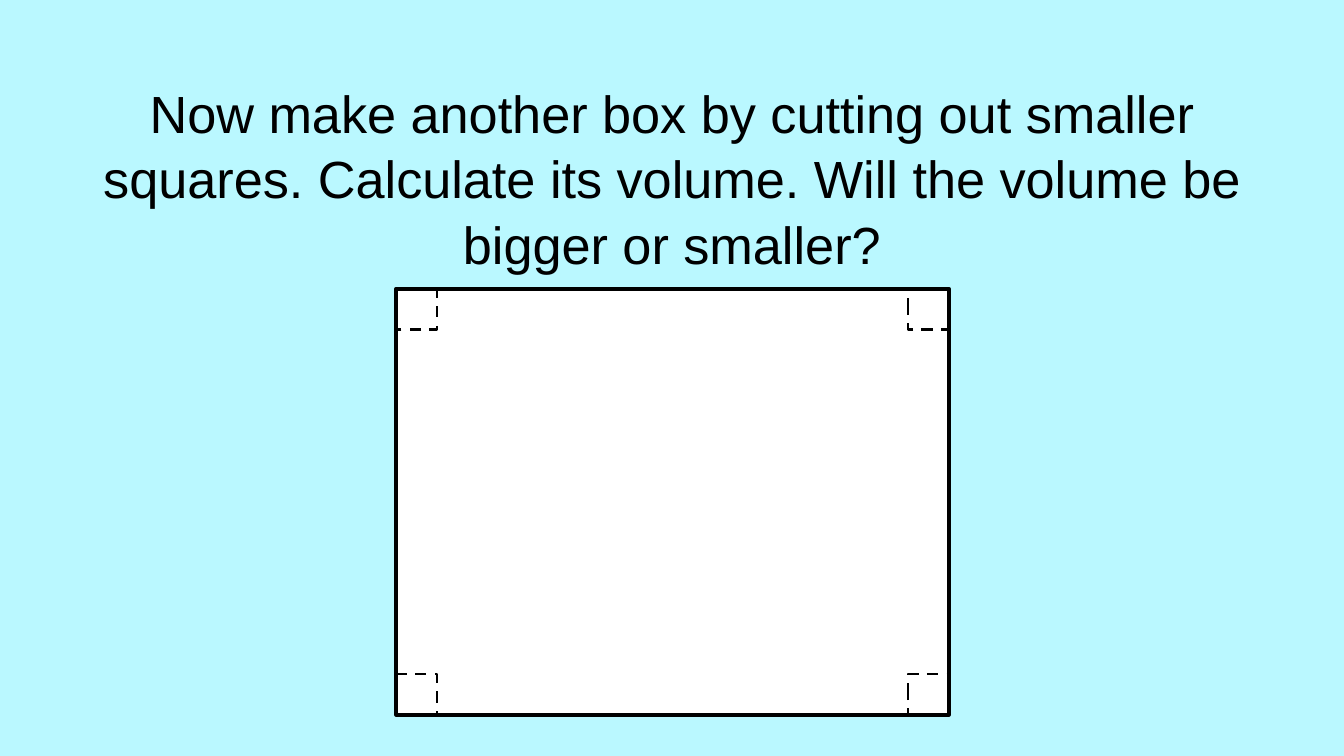
from pptx import Presentation
from pptx.dml.color import RGBColor
from pptx.enum.dml import MSO_LINE
from pptx.enum.shapes import MSO_SHAPE
from pptx.enum.text import MSO_ANCHOR, MSO_AUTO_SIZE, PP_ALIGN
from pptx.util import Cm, Pt

RECTANGLE = MSO_SHAPE.RECTANGLE
DASH = MSO_LINE.DASH
TOP = MSO_ANCHOR.TOP
NO_AUTOFIT = MSO_AUTO_SIZE.NONE
CENTER = PP_ALIGN.CENTER

TITLE_ONLY_LAYOUT = 5
SHEET_LEFT, SHEET_TOP = 7.49, 5.46
SHEET_WIDTH, SHEET_HEIGHT = 10.44, 8.05
CUT_SIDE = 0.77
QUESTION = (
    "Now make another box by cutting out smaller squares. "
    "Calculate its volume. Will the volume be bigger or smaller?"
)


def color(hex_code):
    """Return the colour for a hex string."""
    return RGBColor.from_string(hex_code)


def set_title(page, text):
    """Place and format the centred question in the title placeholder."""
    title = page.shapes.title
    title.left, title.top = Cm(0.86), Cm(1.24)
    title.width, title.height = Cm(23.67), Cm(1.6)
    frame = title.text_frame
    frame.word_wrap = True
    frame.auto_size = NO_AUTOFIT
    frame.vertical_anchor = TOP
    frame.margin_left = frame.margin_right = Cm(0.25)
    frame.margin_top = frame.margin_bottom = Cm(0.25)
    para = frame.paragraphs[0]
    para.alignment = CENTER
    para.line_spacing = 1.04
    span = para.add_run()
    span.text = text
    span.font.name = "Arial"
    span.font.size = Pt(28)
    span.font.color.rgb = color("000000")


def add_turned_rectangle(group, left, top, width, height, weight, fill=None, dash=None):
    """Add a rectangle turned a quarter that covers the given area."""
    shift = (width - height) / 2
    box = group.shapes.add_shape(
        RECTANGLE, Cm(left + shift), Cm(top - shift), Cm(height), Cm(width)
    )
    box.rotation = 90
    box.shadow.inherit = False
    if fill:
        box.fill.solid()
        box.fill.fore_color.rgb = color(fill)
    else:
        box.fill.background()
    box.line.color.rgb = color("000000")
    box.line.width = Pt(weight)
    if dash:
        box.line.dash_style = dash


def add_sheet(page):
    """Add the sheet with a dashed square to cut out at each corner."""
    group = page.shapes.add_group_shape()
    add_turned_rectangle(
        group, SHEET_LEFT, SHEET_TOP, SHEET_WIDTH, SHEET_HEIGHT, 2.25, fill="FFFFFF"
    )
    for left in (SHEET_LEFT, SHEET_LEFT + SHEET_WIDTH - CUT_SIDE):
        for top in (SHEET_TOP, SHEET_TOP + SHEET_HEIGHT - CUT_SIDE):
            add_turned_rectangle(group, left, top, CUT_SIDE, CUT_SIDE, 1.5, dash=DASH)


def main():
    """Build the slide about the second box and save it."""
    deck = Presentation()
    deck.slide_width, deck.slide_height = Cm(25.4), Cm(14.29)
    page = deck.slides.add_slide(deck.slide_layouts[TITLE_ONLY_LAYOUT])
    page.background.fill.solid()
    page.background.fill.fore_color.rgb = color("BAF8FF")
    set_title(page, QUESTION)
    add_sheet(page)
    deck.save("out.pptx")


if __name__ == "__main__":
    main()
